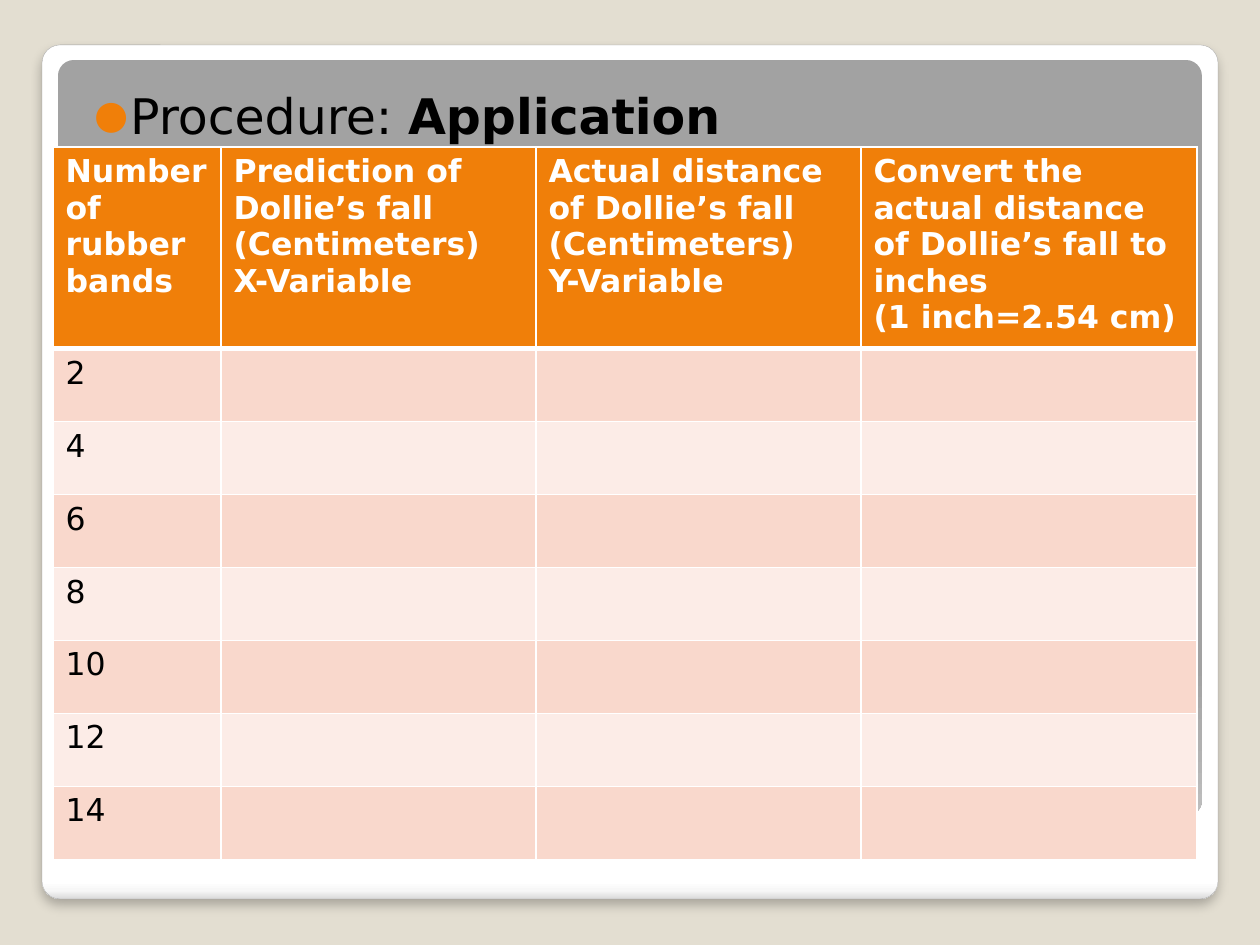
from lxml import etree
from pptx import Presentation
from pptx import util as u
from pptx.dml.color import RGBColor
from pptx.enum import shapes
from pptx.oxml import parse_xml
from pptx.oxml.ns import nsdecls, qn

# Content
TITLE = [("Procedure: ", False), ("Application", True)]
HEADS = [
    "Number of rubber bands",
    "Prediction of Dollie’s fall\n(Centimeters)\nX-Variable",
    "Actual distance of Dollie’s fall\n(Centimeters)\nY-Variable",
    "Convert the actual distance of Dollie’s fall to inches\n(1 inch=2.54 cm)",
]
BANDS = range(2, 15, 2)
COLS = [168, 315, 325, 336]
HEAD_H, ROW_H = 160, 73

FONT = "DejaVu Sans"
SAND = RGBColor(0xE3, 0xDE, 0xD1)
EDGE = RGBColor(0xA4, 0xA4, 0xA4)
BLACK = RGBColor(0, 0, 0)
WHITE = RGBColor(0xFF, 0xFF, 0xFF)
ORANGE = RGBColor(0xF0, 0x7F, 0x09)
ROSE = RGBColor(0xF9, 0xD8, 0xCC)
BLUSH = RGBColor(0xFC, 0xEC, 0xE7)
CARD = [(0, "FFFFFF"), (98, "FFFFFF"), (99, "F7F7F7"), (100, "DADADA")]
PANEL = [(0, "A2A2A2"), (80, "A2A2A2"), (100, "BEBEBE")]


def px(n):
    return u.Emu(round(n * 914400 / 126))


def style(run, size, color, bold):
    font = run.font
    font.name, font.size, font.bold = FONT, u.Pt(size), bold
    font.color.rgb = color


def add_card(slide, box, stops):
    card = slide.shapes.add_shape(
        shapes.MSO_SHAPE.ROUNDED_RECTANGLE, *map(px, box))
    card.adjustments[0] = 0.021
    card.shadow.inherit = False
    card.line.fill.background()
    card.fill.gradient()
    card.fill.gradient_angle = 270
    grad = card._element.spPr.find(qn("a:gradFill"))
    gs = "".join(f'<a:gs pos="{pos * 1000}"><a:srgbClr val="{color}"/></a:gs>'
                 for pos, color in stops)
    grad.replace(grad.find(qn("a:gsLst")),
                 parse_xml(f'<a:gsLst {nsdecls("a")}>{gs}</a:gsLst>'))
    return card


def border(cell, top, bottom):
    props = cell._tc.get_or_add_tcPr()
    sides = [("L", 1), ("R", 1), ("T", top), ("B", bottom)]
    for i, (side, width) in enumerate(sides):
        props.insert(i, parse_xml(
            f'<a:ln{side} {nsdecls("a")} w="{u.Pt(width)}"><a:solidFill>'
            f'<a:srgbClr val="{WHITE}"/></a:solidFill></a:ln{side}>'))


prs = Presentation()
prs.slide_width, prs.slide_height = px(1260), px(945)
slide = prs.slides.add_slide(prs.slide_layouts[6])
slide.background.fill.solid()
slide.background.fill.fore_color.rgb = SAND

# White card with a soft shadow, grey panel on it
card = add_card(slide, (42, 45, 1176, 854), CARD)
card.line.color.rgb = EDGE
card.line.width = u.Pt(0.16)
glow = card._element.spPr.find(qn("a:effectLst"))
glow.append(parse_xml(
    f'<a:outerShdw {nsdecls("a")} blurRad="{u.Pt(6)}" dist="{u.Pt(4)}" '
    'dir="5400000" algn="t" rotWithShape="0"><a:srgbClr val="000000">'
    '<a:alpha val="25000"/></a:srgbClr></a:outerShdw>'))
add_card(slide, (58, 60, 1144, 756), PANEL)

# Bulleted title
frame = slide.shapes.add_textbox(*map(px, (69, 73, 1126, 94))).text_frame
frame.word_wrap = True
frame.margin_left, frame.margin_top = u.Inches(0.2), u.Inches(0.1)
para = frame.paragraphs[0]
para.space_before = u.Pt(2.5)
for words, bold in TITLE:
    run = para.add_run()
    run.text = words
    style(run, 28, BLACK, bold)
props = para._p.get_or_add_pPr()
props.set("marL", str(px(36)))
props.set("indent", str(px(-36)))
color = etree.SubElement(props, qn("a:buClr"))
etree.SubElement(color, qn("a:srgbClr"), val=str(ORANGE))
etree.SubElement(props, qn("a:buSzPct"), val="80000")
etree.SubElement(props, qn("a:buFont"), typeface=FONT)
etree.SubElement(props, qn("a:buChar"), char="●")

# Table: orange heads, then rows in two tints
rows = [HEADS] + [[str(n), "", "", ""] for n in BANDS]
height = HEAD_H + ROW_H * len(BANDS)
table = slide.shapes.add_table(
    len(rows), len(COLS), *map(px, (53, 147, sum(COLS), height))).table
table.first_row = table.horz_banding = False
for col, width in zip(table.columns, COLS):
    col.width = px(width)
for r, row in enumerate(rows):
    head = r == 0
    table.rows[r].height = px(HEAD_H if head else ROW_H)
    for c, words in enumerate(row):
        cell = table.cell(r, c)
        cell.fill.solid()
        cell.fill.fore_color.rgb = ORANGE if head else (BLUSH, ROSE)[r % 2]
        border(cell, 3 if r == 1 else 1, 3 if head else 1)
        cell.text_frame.text = words
        for para in cell.text_frame.paragraphs:
            for run in para.runs:
                style(run, 18, WHITE if head else BLACK, head)

prs.save("out.pptx")
